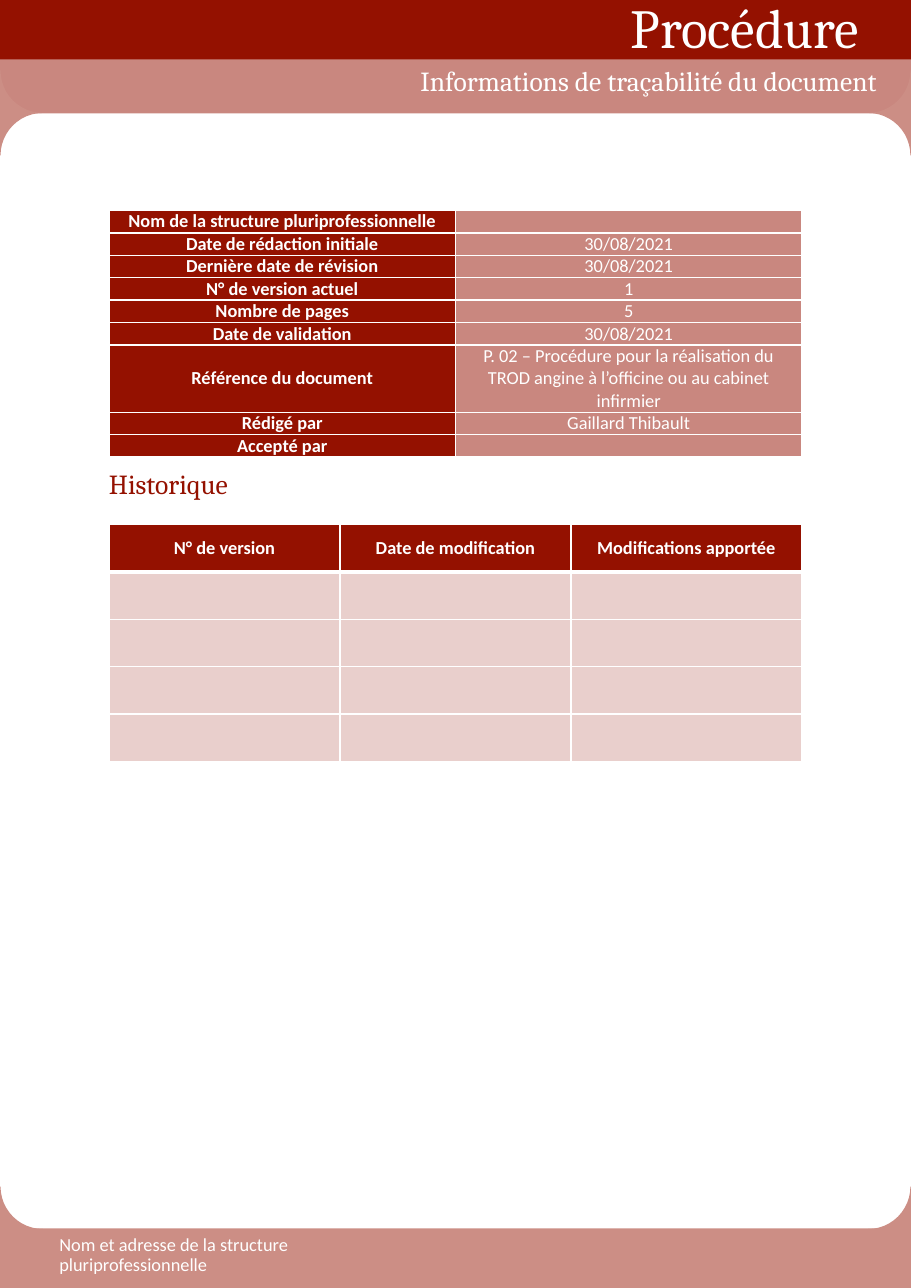
from dataclasses import dataclass

from lxml.etree import SubElement
from pptx import Presentation
from pptx.dml.color import RGBColor
from pptx.enum.shapes import MSO_SHAPE as Preset
from pptx.enum.text import MSO_ANCHOR as Anchor, MSO_AUTO_SIZE as AutoSize, PP_ALIGN as Align
from pptx.oxml import parse_xml
from pptx.oxml.ns import nsdecls, qn
from pptx.util import Inches, Pt


@dataclass(frozen=True)
class Theme:
    dark: str = "941100"
    soft: str = "CC8E85"
    white: str = "FFFFFF"
    heading_font: str = "Cambria"
    body_font: str = "Calibri"
    banner_size: int = 36
    heading_size: int = 18
    body_size: int = 12


THEME = Theme()
WIDTH, HEIGHT = 8.27, 11.69
BAND_HEIGHT = 0.54
CORNER_WIDTH, CORNER_HEIGHT = 0.83, 0.77
TABLE_LEFT, TABLE_WIDTH = 0.99, 6.29

BANNER = "Procédure"
TITLE = "Informations de traçabilité du document"
HISTORY = "Historique"
FOOTER = "Nom et adresse de la structure pluriprofessionnelle"
DOCUMENT_ROWS = [
    ("Nom de la structure pluriprofessionnelle", ""),
    ("Date de rédaction initiale", "30/08/2021"),
    ("Dernière date de révision", "30/08/2021"),
    ("N° de version actuel", "1"),
    ("Nombre de pages", "5"),
    ("Date de validation", "30/08/2021"),
    ("Référence du document",
     "P. 02 – Procédure pour la réalisation du TROD angine à l’officine ou au cabinet infirmier"),
    ("Rédigé par", "Gaillard Thibault"),
    ("Accepté par", ""),
]
HISTORY_ROWS = [("N° de version", "Date de modification", "Modifications apportée")] + [("", "", "")] * 4


def set_fill(fill, color, opacity=100):
    fill.solid()
    fill.fore_color.rgb = RGBColor.from_string(color)
    if opacity < 100:
        color_element = fill._xPr.find(qn("a:solidFill"))[0]
        SubElement(color_element, qn("a:alpha"), val=str(opacity * 1000))


def set_font(paragraph, name, size, color, bold=False):
    font = paragraph.font
    font.name, font.size, font.bold = name, Pt(size), bold
    font.color.rgb = RGBColor.from_string(color)


def add_block(slide, preset, left, top, width, height, color, opacity=100):
    shape = slide.shapes.add_shape(preset, Inches(left), Inches(top), Inches(width), Inches(height))
    shape.shadow.inherit = False
    shape.line.fill.background()
    set_fill(shape.fill, color, opacity)
    return shape


def add_label(slide, text, left, top, width, height, font, size, color):
    box = slide.shapes.add_textbox(Inches(left), Inches(top), Inches(width), Inches(height))
    box.text_frame.word_wrap = True
    box.text_frame.text = text
    paragraph = box.text_frame.paragraphs[0]
    set_font(paragraph, font, size, color)
    return paragraph


def set_borders(cell, top=1, bottom=1):
    properties = cell._tc.get_or_add_tcPr()
    for index, (side, points) in enumerate((("L", 1), ("R", 1), ("T", top), ("B", bottom))):
        properties.insert(index, parse_xml(
            f'<a:ln{side} {nsdecls("a")} w="{Pt(points)}"><a:solidFill>'
            f'<a:srgbClr val="{THEME.white}"/></a:solidFill></a:ln{side}>'))


def add_grid(slide, rows, top, row_height, is_header, opacity, header_rule=1):
    columns = len(rows[0])
    table = slide.shapes.add_table(
        len(rows), columns, Inches(TABLE_LEFT), Inches(top),
        Inches(TABLE_WIDTH), Inches(row_height * len(rows))).table
    table.first_row = table.horz_banding = False
    for row_index, values in enumerate(rows):
        table.rows[row_index].height = Inches(row_height)
        for column_index, text in enumerate(values):
            header = is_header(row_index, column_index)
            cell = table.cell(row_index, column_index)
            cell.text = text
            cell.vertical_anchor = Anchor.MIDDLE
            cell.margin_left = cell.margin_right = Inches(0.07)
            cell.margin_top = cell.margin_bottom = 0
            paragraph = cell.text_frame.paragraphs[0]
            paragraph.alignment = Align.CENTER
            set_font(paragraph, THEME.body_font, THEME.body_size, THEME.white, header)
            if not text:
                SubElement(paragraph._p, qn("a:endParaRPr"), sz=str(THEME.body_size * 100))
            set_fill(cell.fill, THEME.dark, 100 if header else opacity)
            set_borders(cell, header_rule if row_index == 1 else 1,
                        header_rule if row_index == 0 else 1)


def add_frame(slide):
    add_block(slide, Preset.RECTANGLE, 0, 0.49, WIDTH, BAND_HEIGHT, THEME.dark, 50)
    add_block(slide, Preset.RECTANGLE, 0, 0, WIDTH, BAND_HEIGHT, THEME.dark)
    add_block(slide, Preset.RECTANGLE, 0, HEIGHT - BAND_HEIGHT, WIDTH, BAND_HEIGHT, THEME.soft)
    for top in (0.64, 10.77):
        for left in (-0.44, 7.88):
            corner = add_block(slide, Preset.PLAQUE, left, top, CORNER_WIDTH, CORNER_HEIGHT, THEME.soft)
            corner.adjustments[0] = 0.5


def add_title(slide):
    title = slide.shapes.title
    title.left, title.top, title.width, title.height = map(Inches, (0, 0.55, 8.06, 0.4))
    frame = title.text_frame
    frame.text = TITLE
    frame.word_wrap = True
    frame.auto_size = AutoSize.NONE
    frame.vertical_anchor = Anchor.MIDDLE
    paragraph = frame.paragraphs[0]
    paragraph.alignment = Align.RIGHT
    paragraph.line_spacing = 0.9
    set_font(paragraph, THEME.heading_font, THEME.heading_size, THEME.white)
    slide.shapes._spTree.append(title._element)


def main():
    presentation = Presentation()
    presentation.slide_width, presentation.slide_height = Inches(WIDTH), Inches(HEIGHT)
    slide = presentation.slides.add_slide(presentation.slide_layouts[5])
    add_frame(slide)
    add_label(slide, BANNER, 5.63, -0.11, 2.64, 0.71,
              THEME.heading_font, THEME.banner_size, THEME.white)
    add_title(slide)
    add_grid(slide, DOCUMENT_ROWS, 1.91, 0.2, lambda row, column: column == 0, 50)
    add_grid(slide, HISTORY_ROWS, 4.76, 0.43, lambda row, column: row == 0, 20, header_rule=3)
    add_label(slide, HISTORY, 0.89, 4.19, 3.15, 0.4,
              THEME.heading_font, THEME.heading_size, THEME.dark)
    footer = add_label(slide, FOOTER, 0.44, 11.17, 2.7, 0.48,
                       THEME.body_font, THEME.body_size, THEME.white)
    footer.line_spacing = 0.9
    footer.space_before = Pt(8.3)
    presentation.save("out.pptx")


if __name__ == "__main__":
    main()
